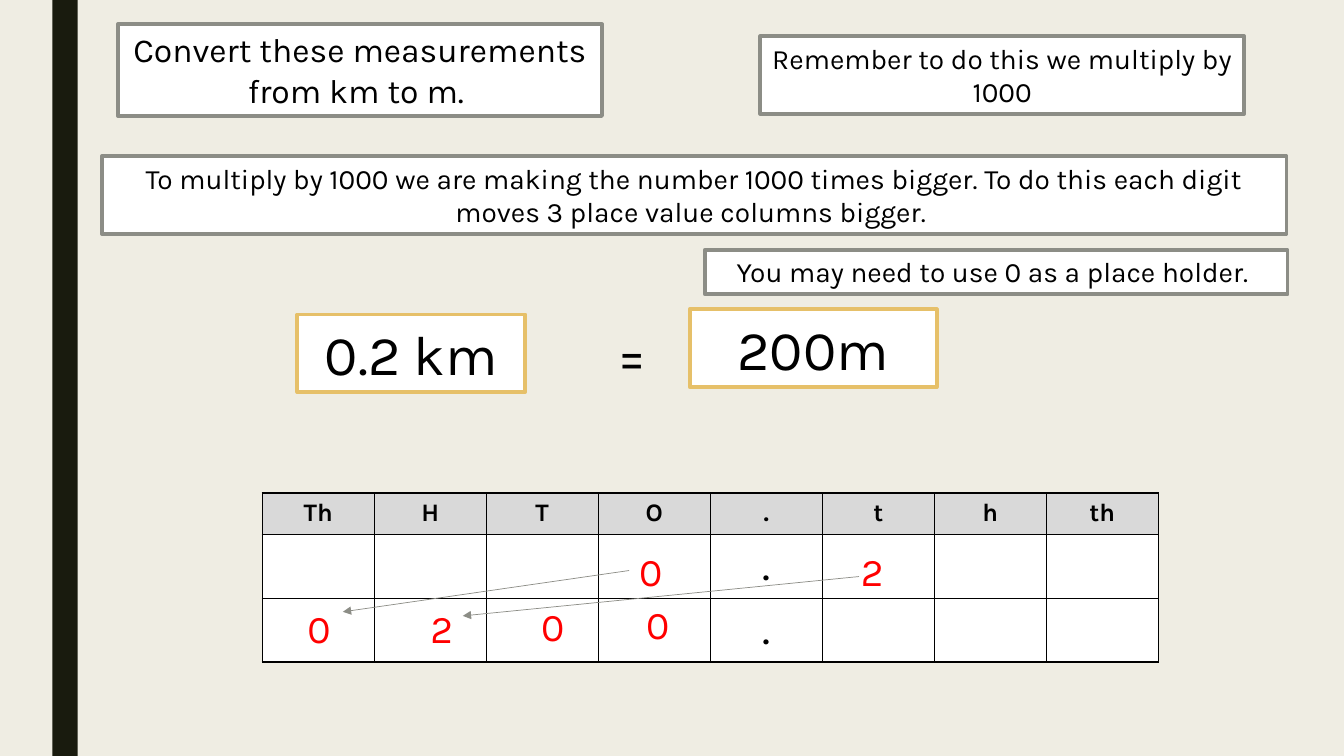
from pptx import Presentation
from pptx.dml.color import RGBColor as Rgb
from pptx.enum.shapes import MSO_CONNECTOR as Conn, MSO_SHAPE as Kind
from pptx.enum.text import MSO_ANCHOR as Anchor, MSO_AUTO_SIZE as Auto, PP_ALIGN as Align
from pptx.oxml import parse_xml
from pptx.oxml.ns import nsdecls
from pptx.util import Inches, Pt

HUES = {"paper": "EFEDE3", "bar": "191B0E", "white": "FFFFFF", "head": "D9D9D9",
        "grey": "8C8D86", "gold": "E6C069", "black": "000000", "red": "FF0000"}
FONT = "Karla"


def hue(name):
    return Rgb.from_string(HUES[name])


def write(frame, text, size=20, color="black", bold=False, align=Align.CENTER):
    """Put one formatted paragraph into a text frame."""
    para = frame.paragraphs[0]
    para.alignment = align
    para.line_spacing = 1.0
    para.space_before = Pt(0)
    run = para.add_run()
    run.text = text
    font = run.font
    font.name, font.size, font.bold = FONT, Pt(size), bold
    font.color.rgb = hue(color)


class Board:
    """Holds the slide and draws each kind of element in its style."""

    def __init__(self, slide):
        self.slide = slide
        self.shapes = slide.shapes
        back = slide.background.fill
        back.solid()
        back.fore_color.rgb = hue("paper")

    def fit(self, frame, wrap=True):
        frame.word_wrap = wrap
        frame.auto_size = Auto.SHAPE_TO_FIT_TEXT
        frame.vertical_anchor = Anchor.TOP

    def paint(self, shape, fill, line=None):
        shape.fill.solid()
        shape.fill.fore_color.rgb = hue(fill)
        if line:
            shape.line.color.rgb = hue(line)
            shape.line.width = Pt(2.75)
        else:
            shape.line.fill.background()

    def rect(self, x, y, w, h, fill="white", line=None):
        shape = self.shapes.add_shape(
            Kind.RECTANGLE, Inches(x), Inches(y), Inches(w), Inches(h))
        shape.shadow.inherit = False
        self.paint(shape, fill, line)
        return shape

    def title(self, text, x, y, w, h):
        shape = self.shapes.title
        shape.left, shape.top = Inches(x), Inches(y)
        shape.width, shape.height = Inches(w), Inches(h)
        self.paint(shape, "white", "grey")
        self.fit(shape.text_frame)
        write(shape.text_frame, text, size=24)

    def box(self, text, x, y, w, h, line="grey", size=20):
        frame = self.rect(x, y, w, h, line=line).text_frame
        self.fit(frame)
        write(frame, text, size=size)

    def label(self, text, x, y, w, h, wrap=True, **style):
        frame = self.shapes.add_textbox(
            Inches(x), Inches(y), Inches(w), Inches(h)).text_frame
        self.fit(frame, wrap)
        write(frame, text, **style)

    def digit(self, text, x, y):
        self.label(text, x, y, 0.43, 0.57, wrap=False,
                   size=28, color="red", align=Align.LEFT)

    def arrow(self, x1, y1, x2, y2):
        line = self.shapes.add_connector(
            Conn.STRAIGHT, Inches(x1), Inches(y1), Inches(x2), Inches(y2))
        line.line.color.rgb = hue("grey")
        line.line.width = Pt(0.5)
        ends = line.line._get_or_add_ln()
        ends.append(parse_xml(f'<a:tailEnd {nsdecls("a")} type="triangle"/>'))
        line._element.spPr.append(parse_xml(f'<a:effectLst {nsdecls("a")}/>'))

    def cell(self, cell, fill):
        # Borders come before the fill in the cell properties
        props = cell._tc.get_or_add_tcPr()
        for side in "LRTB":
            props.append(parse_xml(
                f'<a:ln{side} {nsdecls("a")} w="12700"><a:solidFill>'
                f'<a:srgbClr val="{HUES["black"]}"/></a:solidFill></a:ln{side}>'))
        cell.fill.solid()
        cell.fill.fore_color.rgb = hue(fill)

    def table(self, heads, x, y, w, rows):
        grid = self.shapes.add_table(
            len(rows), len(heads), Inches(x), Inches(y),
            Inches(w), Inches(sum(rows))).table
        grid.first_row = grid.horz_banding = False
        for row, high in zip(grid.rows, rows):
            row.height = Inches(high)
        for col, head in enumerate(heads):
            for row in range(len(rows)):
                cell = grid.cell(row, col)
                self.cell(cell, "white" if row else "head")
                if row == 0:
                    cell.vertical_anchor = Anchor.MIDDLE
                    write(cell.text_frame, head, size=18, bold=True)
                elif head == ".":
                    write(cell.text_frame, head, size=32)


def main():
    deck = Presentation()
    deck.slide_width, deck.slide_height = Inches(13.33), Inches(7.5)
    board = Board(deck.slides.add_slide(deck.slide_layouts[5]))

    # Side bar and instructions
    board.rect(0.52, 0, 0.25, 7.5, fill="bar")
    board.title("Convert these measurements from km to m. ", 1.17, 0.24, 4.8, 0.91)
    board.box("Remember to do this we multiply by 1000", 7.54, 0.36, 4.8, 0.77)
    board.box("To multiply by 1000 we are making the number 1000 times bigger. "
              "To do this each digit moves 3 place value columns bigger. ",
              1.01, 1.55, 11.75, 0.77)
    board.box("You may need to use 0 as a place holder. ", 6.99, 2.48, 5.78, 0.44)

    # Worked example
    board.box("0.2 km", 2.95, 3.12, 2.26, 0.77, line="gold", size=40)
    board.label("=", 5.36, 3.12, 1.82, 0.77, size=40)
    board.box("200m", 6.84, 3.07, 2.45, 0.77, line="gold", size=40)

    # Place value chart
    heads = ["Th", "H", "T", "O", ".", "t", "h", "th"]
    board.table(heads, 2.6, 4.89, 8.89, [0.41, 0.63, 0.63])

    # Digits before and after the move
    for text, x, y in [("0", 6.24, 5.38), ("2", 8.44, 5.38), ("0", 2.95, 5.95),
                       ("2", 4.17, 5.95), ("0", 5.27, 5.93), ("0", 6.31, 5.91)]:
        board.digit(text, x, y)
    board.arrow(6.24, 5.66, 3.4, 6.07)
    board.arrow(8.52, 5.72, 4.59, 6.11)

    deck.save("out.pptx")


if __name__ == "__main__":
    main()
